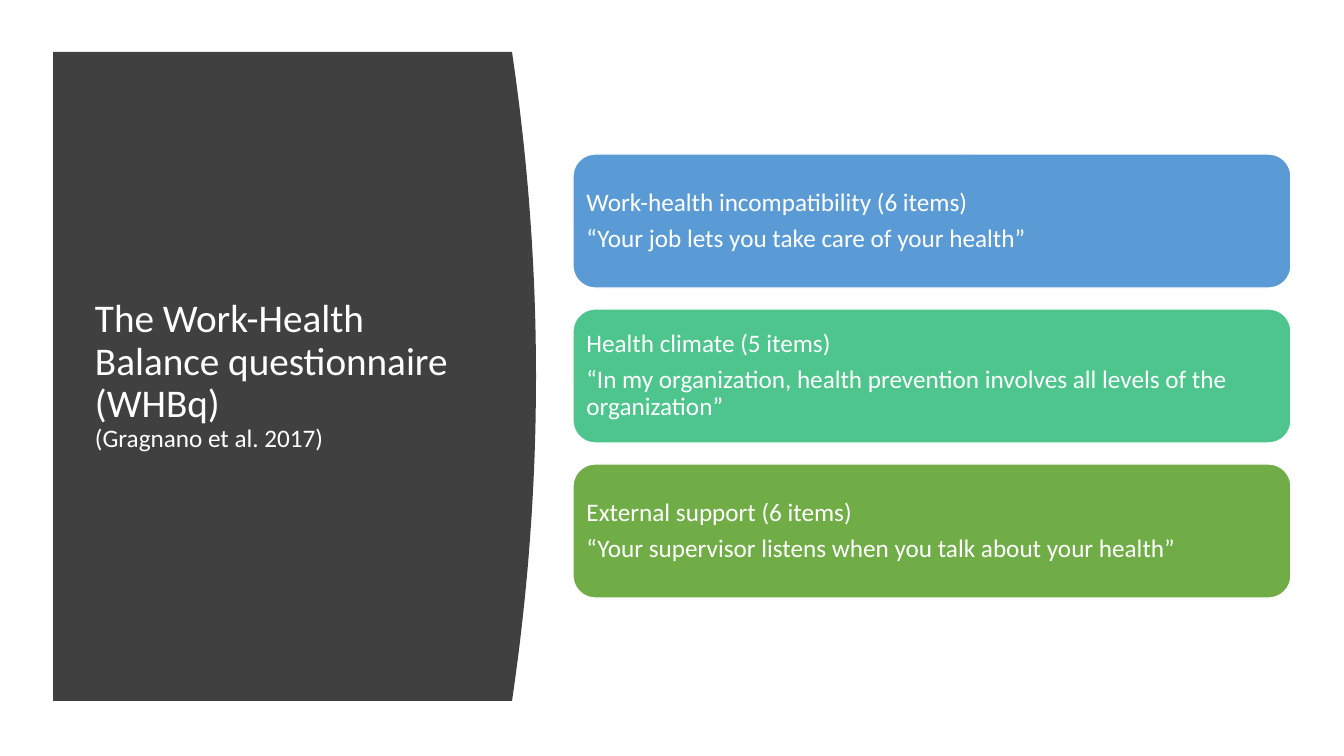
from pptx import Presentation
from pptx import util as u
from pptx.dml.color import RGBColor
from pptx.enum import shapes, text

PX = 914400 / 100.8
FONT = "Calibri"
WHITE = RGBColor(0xFF, 0xFF, 0xFF)
CHARCOAL = RGBColor(0x40, 0x40, 0x40)
BLUE = RGBColor(0x5B, 0x9B, 0xD5)
MINT = RGBColor(0x4D, 0xC5, 0x8D)
GREEN = RGBColor(0x70, 0xAD, 0x47)

CARDS = [
    (BLUE, "Work-health incompatibility (6 items)",
     "“Your job lets you take care of your health”"),
    (MINT, "Health climate (5 items)",
     "“In my organization, health prevention involves all levels of the organization”"),
    (GREEN, "External support (6 items)",
     "“Your supervisor listens when you talk about your health”"),
]


def px(n):
    return u.Emu(round(n * PX))


def set_frame(tf, inset):
    tf.word_wrap = True
    tf.vertical_anchor = text.MSO_ANCHOR.MIDDLE
    tf.margin_left = tf.margin_right = px(inset)
    tf.margin_top = tf.margin_bottom = px(inset)


def format_paragraph(p, sizes):
    p.alignment = text.PP_ALIGN.LEFT
    p.line_spacing = 0.9
    for r, size in zip(p.runs, sizes):
        r.font.name = FONT
        r.font.size = u.Pt(size)
        r.font.color.rgb = WHITE


def add_curved_panel(s, left, top, edge, bulge, bottom):
    mid, half, steps = (top + bottom) / 2, (bottom - top) / 2, 48
    curve = []
    for i in range(steps + 1):
        t = 2 * i / steps - 1
        curve.append((px(edge + bulge * (1 - t * t)), px(mid + half * t)))
    fb = s.shapes.build_freeform(px(left), px(top), scale=1.0)
    fb.add_line_segments(curve + [(px(left), px(bottom))], close=True)
    sp = fb.convert_to_shape()
    sp.shadow.inherit = False
    sp.fill.solid()
    sp.fill.fore_color.rgb = CHARCOAL
    sp.line.fill.background()


def add_title(s, left, top, width, height, title, source):
    tf = s.shapes.add_textbox(px(left), px(top), px(width), px(height)).text_frame
    set_frame(tf, 0)
    p = tf.paragraphs[0]
    p.text = title + "\v" + source
    format_paragraph(p, (28, 18))


def add_card(s, left, top, width, height, color, heading, quote):
    sp = s.shapes.add_shape(shapes.MSO_SHAPE.ROUNDED_RECTANGLE,
                            px(left), px(top), px(width), px(height))
    sp.shadow.inherit = False
    sp.fill.solid()
    sp.fill.fore_color.rgb = color
    sp.line.color.rgb = WHITE
    sp.line.width = u.Pt(1)
    tf = sp.text_frame
    set_frame(tf, 7)
    tf.text = heading + "\n" + quote
    for p in tf.paragraphs:
        format_paragraph(p, (18,))
    tf.paragraphs[0].space_after = u.Pt(6.3)


def main():
    prs = Presentation()
    prs.slide_width, prs.slide_height = px(1344), px(756)
    s = prs.slides.add_slide(prs.slide_layouts[6])
    add_curved_panel(s, 53, 52, 512, 24, 701)
    add_title(s, 95, 112, 377, 528,
              "The Work-Health Balance questionnaire (WHBq)",
              "(Gragnano et al. 2017)")
    for i, card in enumerate(CARDS):
        add_card(s, 573, 154 + 155 * i, 718, 134, *card)
    prs.save("out.pptx")


if __name__ == "__main__":
    main()
